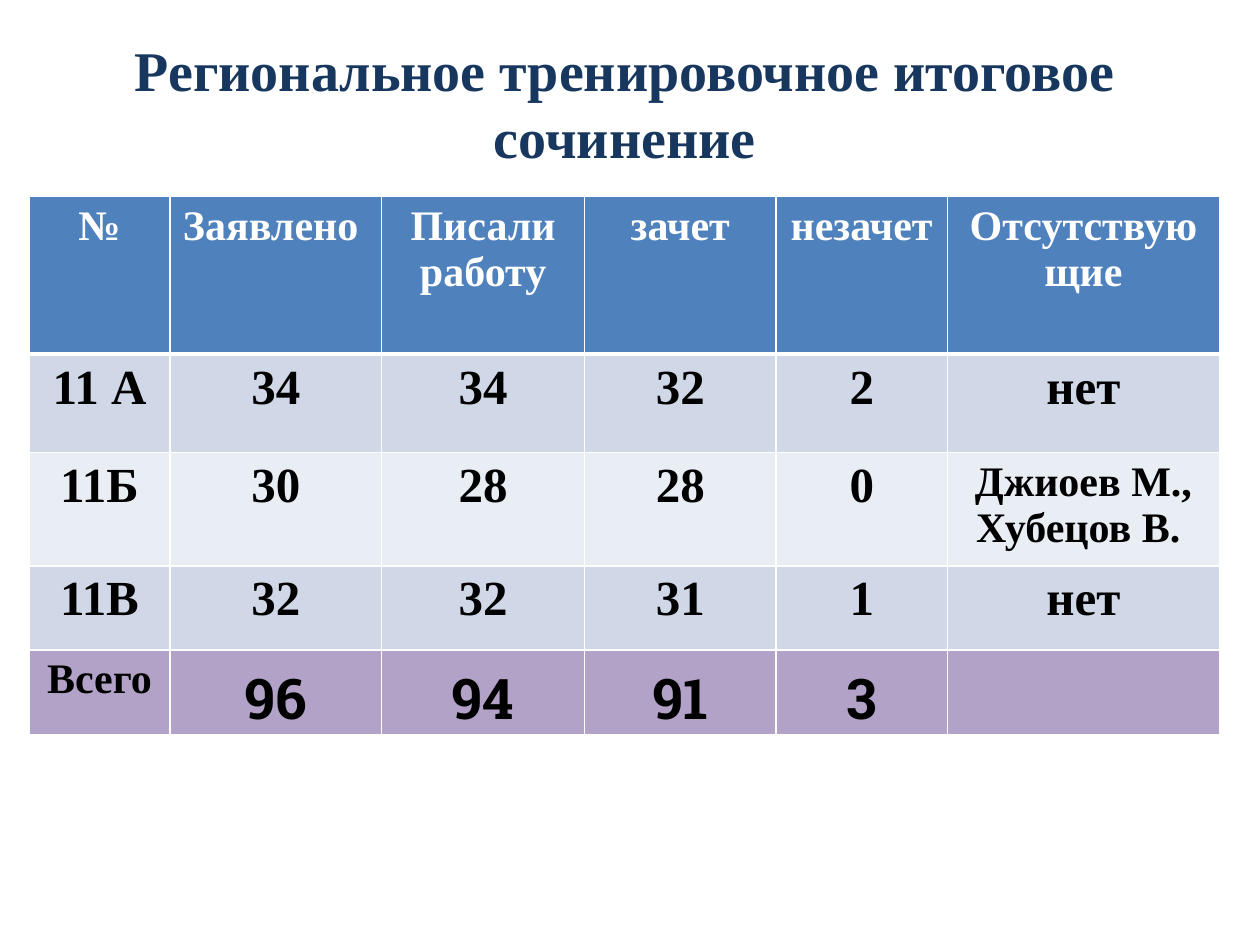
"""Build a slide with the results table of a regional training essay."""
import pptx
import pptx.dml.color
import pptx.enum.text
import pptx.util
from lxml import etree
from pptx.oxml.ns import qn

Inches = pptx.util.Inches
SERIF, SLAB = "Times New Roman", "Roboto Slab"
BLACK, WHITE = "000000", "FFFFFF"
TITLE = "Региональное тренировочное итоговое сочинение"
COLUMN_WIDTHS = [1.12, 1.68, 1.61, 1.52, 1.36, 2.16]
ROWS = [
    (1.25, "4F81BD", ["№", "Заявлено ", "Писали работу", "зачет", "незачет", "Отсутствующие"]),
    (0.78, "D0D8E8", ["11 А", "34", "34", "32", "2", "нет"]),
    (0.67, "E9EDF4", ["11Б", "30", "28", "28", "0", "Джиоев М.,\nХубецов В. "]),
    (0.67, "D0D8E8", ["11В", "32", "32", "31", "1", "нет"]),
    (0.67, "B3A2C7", ["Всего", "96", "94", "91", "3", ""]),
]
TOTAL_ROW = len(ROWS) - 1


def rgb(color):
    return pptx.dml.color.RGBColor.from_string(color)


def write(frame, text, size, color, name=SERIF):
    frame.text = text
    for paragraph in frame.paragraphs:
        paragraph.alignment = pptx.enum.text.PP_ALIGN.CENTER
        font = paragraph.font
        font.name, font.size, font.bold = name, pptx.util.Pt(size), True
        font.color.rgb = rgb(color)


def add_borders(cell, row_index):
    properties = cell._tc.get_or_add_tcPr()
    widths = {"L": 1, "R": 1, "T": 3 if row_index == 1 else 1, "B": 3 if row_index == 0 else 1}
    for side, width in widths.items():
        line = etree.SubElement(properties, qn(f"a:ln{side}"), w=str(pptx.util.Pt(width)))
        fill = etree.SubElement(line, qn("a:solidFill"))
        etree.SubElement(fill, qn("a:srgbClr"), val=WHITE)


def fill_cell(cell, text, row_index, color):
    add_borders(cell, row_index)
    cell.fill.solid()
    cell.fill.fore_color.rgb = rgb(color)
    if row_index == TOTAL_ROW and text.isdigit():
        write(cell.text_frame, text, 32, BLACK, SLAB)
        cell.vertical_anchor = pptx.enum.text.MSO_ANCHOR.BOTTOM
        cell.margin_left = cell.margin_right = cell.margin_top = Inches(0.01)
        cell.margin_bottom = 0
    elif text:
        small = row_index in (0, TOTAL_ROW) or "\n" in text
        write(cell.text_frame, text, 24 if small else 28, BLACK if row_index else WHITE)


def add_title(slide):
    box = slide.shapes.add_textbox(Inches(0.31), Inches(0.23), Inches(9.3), Inches(1.18))
    box.text_frame.word_wrap = True
    box.text_frame.auto_size = pptx.enum.text.MSO_AUTO_SIZE.SHAPE_TO_FIT_TEXT
    write(box.text_frame, TITLE, 32, "17375E")


def add_results(slide):
    table = slide.shapes.add_table(
        len(ROWS), len(COLUMN_WIDTHS), Inches(0.23), Inches(1.56), Inches(9.45), Inches(4.26)
    ).table
    for column, width in zip(table.columns, COLUMN_WIDTHS):
        column.width = Inches(width)
    for row_index, (height, color, texts) in enumerate(ROWS):
        table.rows[row_index].height = Inches(height)
        for column_index, text in enumerate(texts):
            fill_cell(table.cell(row_index, column_index), text, row_index, color)


def main():
    presentation = pptx.Presentation()
    presentation.slide_width, presentation.slide_height = Inches(10), Inches(7.5)
    slide = presentation.slides.add_slide(presentation.slide_layouts[6])
    add_title(slide)
    add_results(slide)
    presentation.save("out.pptx")


if __name__ == "__main__":
    main()
